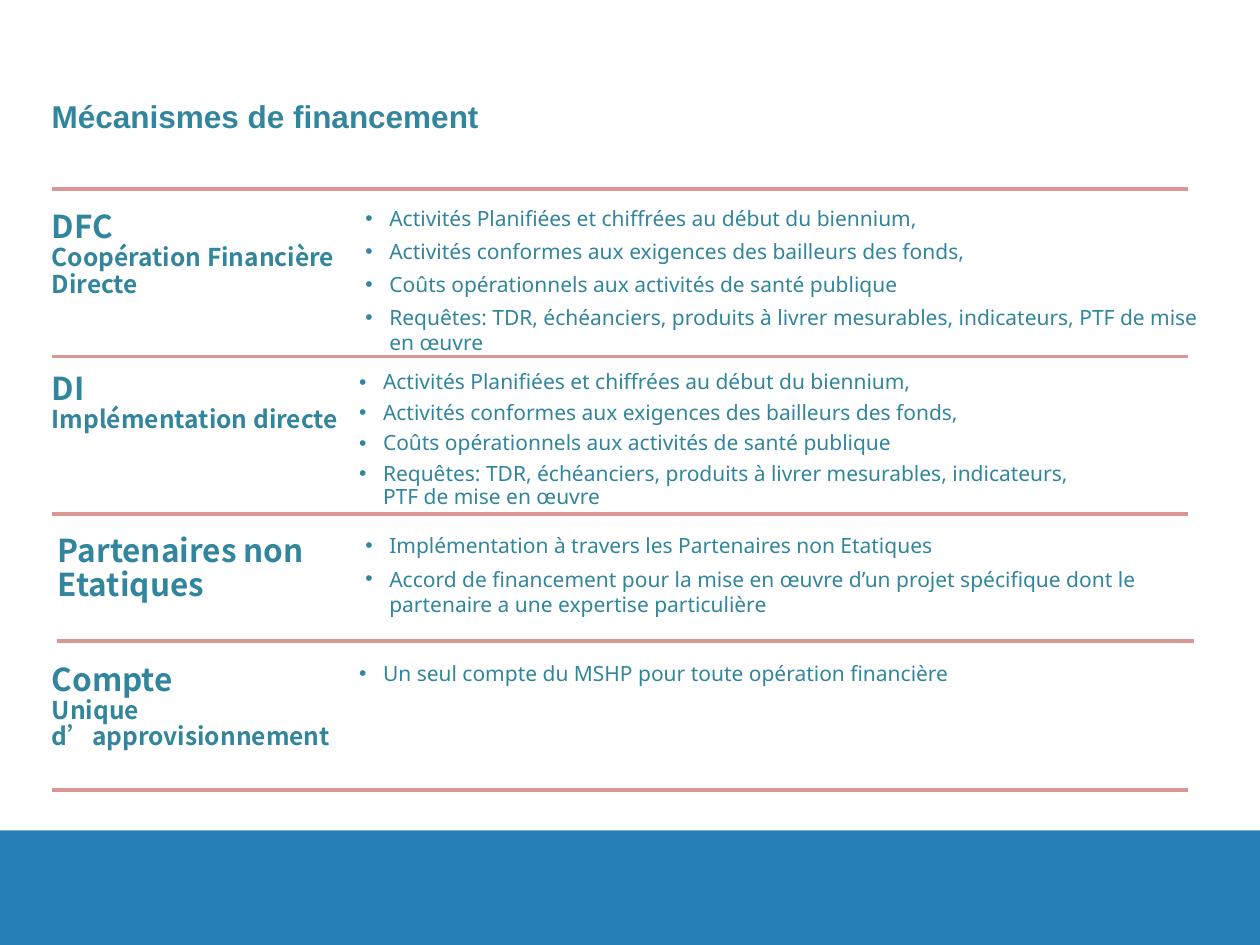
import dataclasses

import lxml.etree
import pptx
import pptx.dml.color
import pptx.enum.shapes
import pptx.enum.text
import pptx.oxml.ns
import pptx.util


@dataclasses.dataclass(frozen=True)
class Theme:
    """Colours, fonts and type sizes of the slide."""
    text: str = "31859C"
    rule: str = "D99694"
    band: str = "2680B8"
    title_font: str = "Arial"
    label_font: str = "Noto Sans CJK SC"
    body_font: str = "Noto Sans"
    large: int = 18
    medium: int = 14
    small: int = 12
    rule_width: float = 2.25
    bullet_gap: float = 4.5
    hang: float = 0.19


@dataclasses.dataclass(frozen=True)
class Mechanism:
    """One row: wording, with boxes as percentages of the slide's size."""
    labels: tuple
    label_box: tuple
    points: tuple
    points_box: tuple
    rule_left: float
    rule_top: float
    spacing: float = 1.0


THEME = Theme()
WIDTH, HEIGHT = pptx.util.Inches(10), pptx.util.Inches(7.5)
RULE_LENGTH = 90.2
SHARED_POINTS = (
    "Activités Planifiées et chiffrées au début du biennium,",
    "Activités conformes aux exigences des bailleurs des fonds,",
    "Coûts opérationnels aux activités de santé publique",
    "Requêtes: TDR, échéanciers, produits à livrer mesurables, indicateurs, PTF de mise en œuvre",
)
MECHANISMS = (
    Mechanism(("DFC", "Coopération Financière Directe"), (3.4, 21.87, 24.3, 6.67),
              SHARED_POINTS, (28.3, 21.2, 69.8, 17.6), 4.1, 37.73),
    Mechanism(("DI", "Implémentation directe"), (3.4, 38.93, 25.1, 6.67),
              SHARED_POINTS, (27.8, 38.8, 59.7, 16.53), 4.1, 54.4, 0.9),
    Mechanism(("Partenaires non Etatiques",), (3.9, 56.13, 25.1, 6.67),
              ("Implémentation à travers les Partenaires non Etatiques",
               "Accord de financement pour la mise en œuvre d’un projet spécifique "
               "dont le partenaire a une expertise particulière"),
              (28.3, 55.87, 68.8, 14.13), 4.55, 67.87),
    Mechanism(("Compte", "Unique d’approvisionnement"), (3.4, 69.73, 25.1, 6.67),
              ("Un seul compte du MSHP pour toute opération financière",),
              (27.8, 69.33, 68.8, 14.13), 4.1, 83.6),
)


def colour(code):
    """Return an RGB colour from its hexadecimal code."""
    return pptx.dml.color.RGBColor.from_string(code)


def place(left, top, width, height):
    """Turn percentages of the slide into lengths."""
    return [round(share * side / 100) for share, side in
            zip((left, top, width, height), (WIDTH, HEIGHT, WIDTH, HEIGHT))]


def add_band(page):
    """Draw the blue band along the foot of the page."""
    band = page.shapes.add_shape(pptx.enum.shapes.MSO_SHAPE.RECTANGLE,
                                 *place(0, 87.87, 100, 12.13))
    band.shadow.inherit = False
    band.fill.solid()
    band.fill.fore_color.rgb = colour(THEME.band)
    band.line.fill.background()


def add_rule(page, left, top):
    """Draw a horizontal rule."""
    start, level, length, _ = place(left, top, RULE_LENGTH, 0)
    rule = page.shapes.add_connector(pptx.enum.shapes.MSO_CONNECTOR.STRAIGHT,
                                     start, level, start + length, level)
    rule.line.color.rgb = colour(THEME.rule)
    rule.line.width = pptx.util.Pt(THEME.rule_width)
    lxml.etree.SubElement(rule._element.spPr, pptx.oxml.ns.qn("a:effectLst"))


def add_text(page, box, lines, sizes, font, bold=False, spacing=1.0):
    """Add a text box with one paragraph per line and return its paragraphs."""
    frame = page.shapes.add_textbox(*place(*box)).text_frame
    frame.word_wrap = True
    frame.vertical_anchor = pptx.enum.text.MSO_ANCHOR.TOP
    frame.margin_left = frame.margin_right = pptx.util.Inches(0.07)
    frame.margin_top = frame.margin_bottom = pptx.util.Inches(0.04)
    frame.text = "\n".join(lines)
    for para, size in zip(frame.paragraphs, sizes):
        para.line_spacing = spacing
        for span in para.runs:
            span.font.name = font
            span.font.size = pptx.util.Pt(size)
            span.font.bold = bold
            span.font.color.rgb = colour(THEME.text)
            east_asian = lxml.etree.SubElement(span.font._element, pptx.oxml.ns.qn("a:ea"))
            east_asian.set("typeface", font)
    return frame.paragraphs


def add_bullets(page, box, points, spacing):
    """Add a bulleted list with hanging indents."""
    paras = add_text(page, box, points, [THEME.small] * len(points),
                     THEME.body_font, spacing=spacing)
    hang = pptx.util.Inches(THEME.hang)
    for index, para in enumerate(paras):
        para.space_before = pptx.util.Pt(THEME.bullet_gap if index else 0)
        properties = para._p.get_or_add_pPr()
        properties.set("marL", str(hang))
        properties.set("indent", str(-hang))
        font = lxml.etree.SubElement(properties, pptx.oxml.ns.qn("a:buFont"))
        font.set("typeface", "Arial")
        bullet = lxml.etree.SubElement(properties, pptx.oxml.ns.qn("a:buChar"))
        bullet.set("char", "•")


def add_mechanism(page, mechanism):
    """Add one financing mechanism with its closing rule."""
    add_text(page, mechanism.label_box, mechanism.labels, (THEME.large, THEME.medium),
             THEME.label_font, bold=True, spacing=0.9)
    add_bullets(page, mechanism.points_box, mechanism.points, mechanism.spacing)
    add_rule(page, mechanism.rule_left, mechanism.rule_top)


def main():
    """Build and save the slide."""
    deck = pptx.Presentation()
    deck.slide_width, deck.slide_height = WIDTH, HEIGHT
    page = deck.slides.add_slide(deck.slide_layouts[6])
    add_band(page)
    add_text(page, (3.4, 8.93, 57, 8.67), ("Mécanismes de financement",),
             (THEME.large,), THEME.title_font, bold=True, spacing=1.2)
    add_rule(page, 4.1, 20)
    for mechanism in MECHANISMS:
        add_mechanism(page, mechanism)
    deck.save("out.pptx")


if __name__ == "__main__":
    main()
